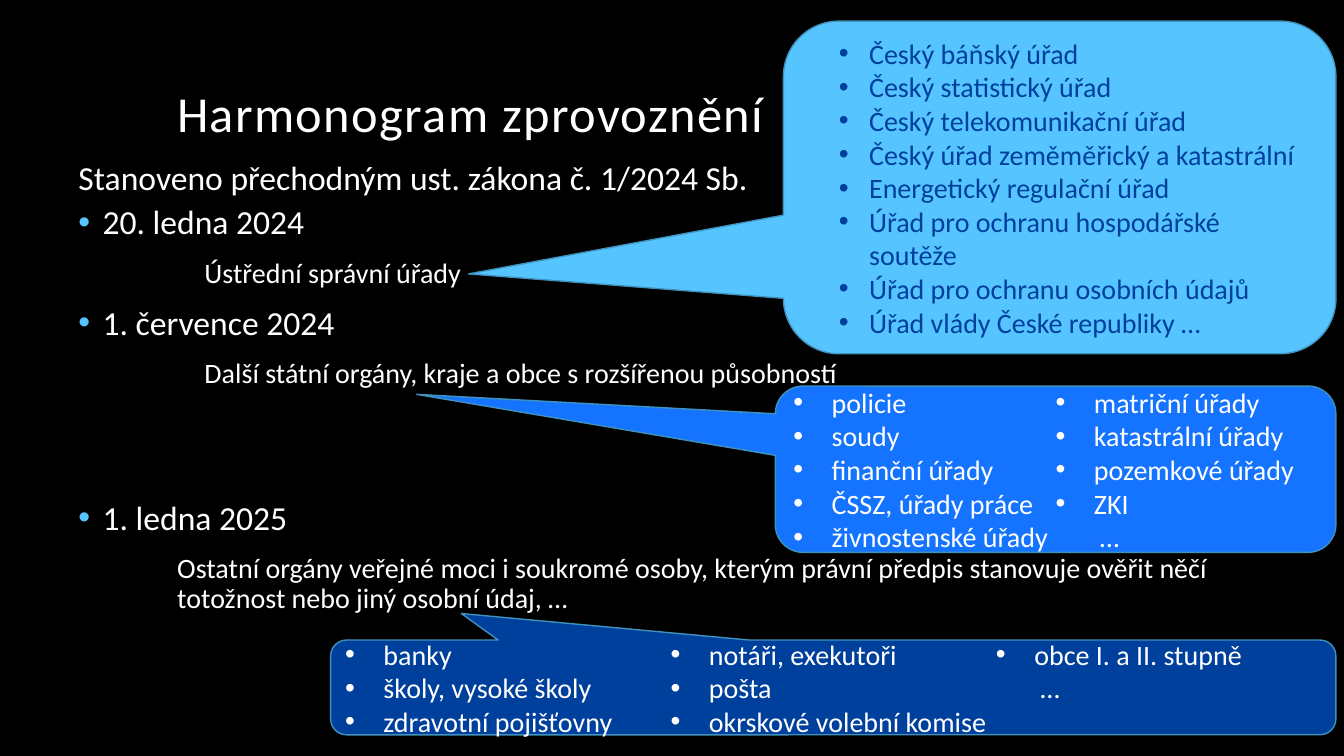
from dataclasses import dataclass

from lxml import etree
from pptx import Presentation
from pptx.dml.color import RGBColor
from pptx.enum.shapes import MSO_SHAPE
from pptx.enum.text import MSO_ANCHOR, PP_ALIGN
from pptx.oxml.ns import qn
from pptx.util import Inches, Pt

CALLOUT = MSO_SHAPE.ROUNDED_RECTANGULAR_CALLOUT
TOP, MIDDLE, BOTTOM = MSO_ANCHOR.TOP, MSO_ANCHOR.MIDDLE, MSO_ANCHOR.BOTTOM
LEFT = PP_ALIGN.LEFT

BLACK = RGBColor(0x00, 0x00, 0x00)
WHITE = RGBColor(0xFF, 0xFF, 0xFF)
SKY = RGBColor(0x56, 0xC5, 0xFF)
BLUE = RGBColor(0x14, 0x74, 0xFF)
NAVY = RGBColor(0x00, 0x40, 0x9D)
EDGE = RGBColor(0x40, 0x92, 0xBD)
FONT = "Calibri"
MORE = "…"


@dataclass
class Line:
    text: str
    size: int = 20
    margin: float = 0
    hang: float = 0  # a hanging indent carries a bullet
    before: int = 0
    spacing: float = 1.0
    color: RGBColor = WHITE
    dot: RGBColor | None = None


@dataclass
class Bubble:
    box: tuple[float, float, float, float]
    tip: tuple[float, float]
    fill: RGBColor
    items: list[str]
    cols: int = 1
    margin: float = 0.38
    hang: float = 0.38
    color: RGBColor = WHITE


def write(shape, lines: list[Line], anchor) -> None:
    frame = shape.text_frame
    frame.word_wrap = True
    frame.vertical_anchor = anchor
    for i, line in enumerate(lines):
        para = frame.paragraphs[0] if i == 0 else frame.add_paragraph()
        para.text = line.text
        props = para._p.get_or_add_pPr()
        props.set("marL", str(Inches(line.margin)))
        props.set("indent", str(-Inches(line.hang)))
        if line.hang:
            if line.dot:
                tint = etree.SubElement(props, qn("a:buClr"))
                etree.SubElement(tint, qn("a:srgbClr"), val=str(line.dot))
            etree.SubElement(props, qn("a:buFont"), typeface="Arial")
            etree.SubElement(props, qn("a:buChar"), char="•")
        else:
            etree.SubElement(props, qn("a:buNone"))
        para.alignment = LEFT
        para.line_spacing = line.spacing
        para.space_before = Pt(line.before)
        para.font.name = FONT
        para.font.size = Pt(line.size)
        para.font.color.rgb = line.color


def add_text(slide, box: tuple[float, float, float, float],
             lines: list[Line], anchor=TOP):
    shape = slide.shapes.add_textbox(*map(Inches, box))
    write(shape, lines, anchor)
    return shape


def add_bubble(slide, data: Bubble) -> None:
    shape = slide.shapes.add_shape(CALLOUT, *map(Inches, data.box))
    shape.shadow.inherit = False
    shape.adjustments[0], shape.adjustments[1] = data.tip
    shape.fill.solid()
    shape.fill.fore_color.rgb = data.fill
    shape.line.color.rgb = EDGE
    shape.line.width = Pt(1)
    lines = [
        Line(item, margin=0.44) if item == MORE
        else Line(item, margin=data.margin, hang=data.hang, color=data.color)
        for item in data.items
    ]
    write(shape, lines, MIDDLE)
    shape.element.txBody.bodyPr.set("numCol", str(data.cols))


def date(text: str, before: int) -> Line:
    return Line(text, 24, 0.24, 0.24, before, 0.9, dot=SKY)


def detail(text: str, margin: float) -> Line:
    return Line(text, margin=margin, before=12, spacing=0.9)


OFFICES = Bubble((7.77, 0.21, 5.48, 3.3), (-1.07, 0.26), SKY, [
    "Český báňský úřad",
    "Český statistický úřad",
    "Český telekomunikační úřad",
    "Český úřad zeměměřický a katastrální",
    "Energetický regulační úřad",
    "Úřad pro ochranu hospodářské soutěže",
    "Úřad pro ochranu osobních údajů",
    "Úřad vlády České republiky …",
], margin=0.59, hang=0.3, color=NAVY)

OTHERS = Bubble((3.28, 6.35, 9.97, 0.94), (-0.37, -0.78), NAVY, [
    "banky", "školy, vysoké školy", "zdravotní pojišťovny",
    "notáři, exekutoři", "pošta", "okrskové volební komise",
    "obce I. a II. stupně", MORE,
], cols=3)

STATE = Bubble((7.69, 3.83, 5.56, 1.65), (-1.14, -0.45), BLUE, [
    "policie", "soudy", "finanční úřady", "ČSSZ, úřady práce",
    "živnostenské úřady", "matriční úřady", "katastrální úřady",
    "pozemkové úřady", "ZKI", MORE,
], cols=2)

PLAN = [
    Line("Stanoveno přechodným ust. zákona č. 1/2024 Sb.", 24, spacing=0.9),
    date("20. ledna 2024", 6),
    detail("Ústřední správní úřady", 1.25),
    date("1. července 2024", 12),
    detail("Další státní orgány, kraje a obce s rozšířenou působností", 1.25),
    date("1. ledna 2025", 80),
    detail("Ostatní orgány veřejné moci i soukromé osoby, kterým právní předpis "
           "stanovuje ověřit něčí totožnost nebo jiný osobní údaj, …", 0.98),
]


def main() -> None:
    deck = Presentation()
    deck.slide_width, deck.slide_height = Inches(13.33), Inches(7.5)
    slide = deck.slides.add_slide(deck.slide_layouts[6])
    slide.background.fill.solid()
    slide.background.fill.fore_color.rgb = BLACK

    # Title with widened letter spacing
    title = add_text(slide, (1.66, 0.42, 10, 1.05),
                     [Line("Harmonogram zprovoznění", 36, spacing=0.9)], BOTTOM)
    run = title.text_frame.paragraphs[0].runs[0]
    run.font._element.set("spc", "100")

    # Timeline and its callouts, from back to front
    add_bubble(slide, OFFICES)
    add_bubble(slide, OTHERS)
    add_text(slide, (0.68, 1.55, 12.13, 5.35), PLAN)
    add_bubble(slide, STATE)

    deck.save("out.pptx")


if __name__ == "__main__":
    main()
